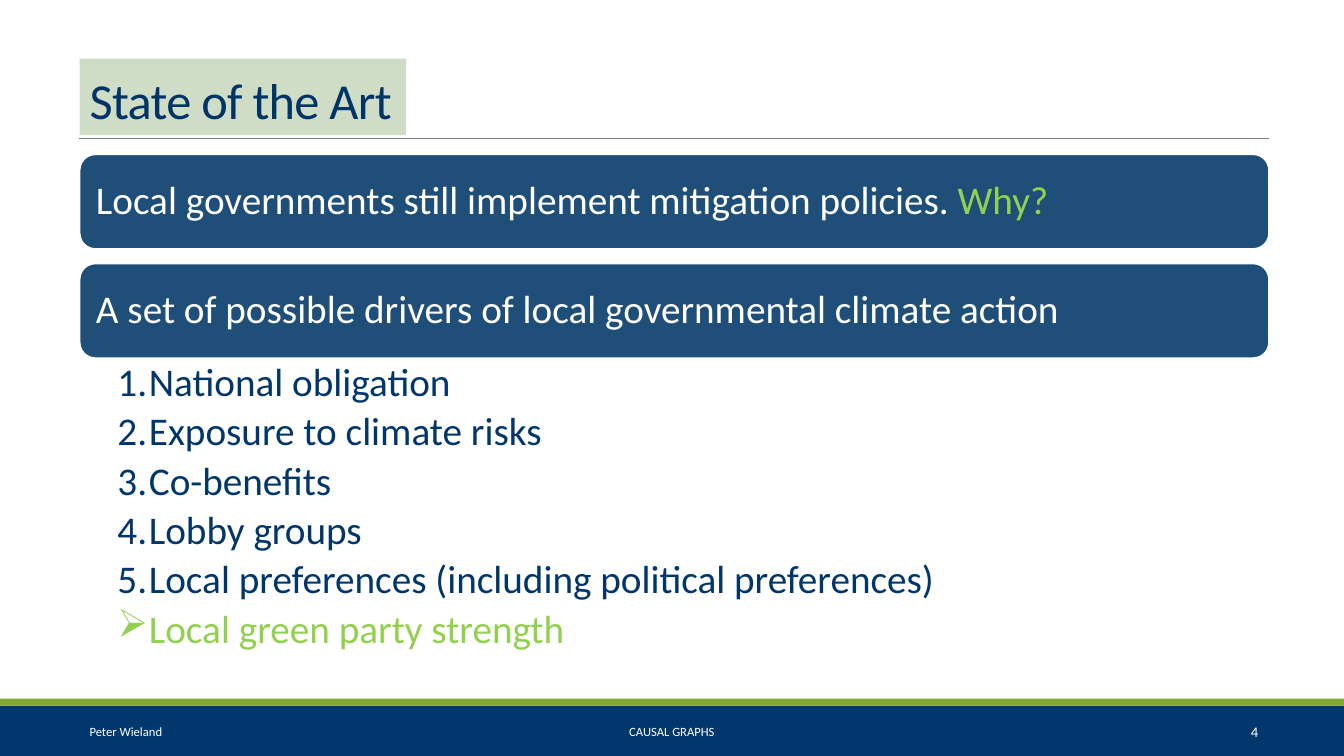
"""Build the State of the Art slide on drivers of local climate action."""
from dataclasses import dataclass

from lxml.etree import SubElement
from pptx import Presentation
from pptx.dml.color import RGBColor
from pptx.enum.shapes import MSO_CONNECTOR as Connector, MSO_SHAPE as Shape
from pptx.enum.text import MSO_ANCHOR as Anchor, MSO_AUTO_SIZE as AutoSize, PP_ALIGN as Align
from pptx.oxml.ns import qn
from pptx.util import Pt

COLORS = {
    "white": "FFFFFF", "footer": "00376C", "stripe": "80A835", "rule": "808080",
    "title": "003366", "title_fill": "548235", "banner": "1F4E79",
    "driver": "00366C", "accent": "92D050",
}
FONT = "Calibri"
LEFT, WIDTH = 56.9, 849.6
BODY_SIZE = 28


@dataclass(frozen=True)
class Bar:
    top: float
    height: float
    color: str


@dataclass(frozen=True)
class FooterNote:
    text: str
    left: float
    width: float
    size: float
    align: Align


@dataclass(frozen=True)
class Banner:
    top: float
    statement: str
    question: str = ""


@dataclass(frozen=True)
class Driver:
    text: str
    color: str = "driver"
    bullet: str = ""


BARS = [Bar(504, 36, "footer"), Bar(499, 5, "stripe")]
FOOTER_NOTES = [
    FooterNote("Peter Wieland", LEFT, 194.4, 9, Align.LEFT),
    FooterNote("CAUSAL GRAPHS", 290.2, 379.4, 9, Align.CENTER),
    FooterNote("4", 802.8, 103, 10.5, Align.RIGHT),
]
BANNERS = [
    Banner(110.2, "Local governments still implement mitigation policies. ", "Why?"),
    Banner(188.2, "A set of possible drivers of local governmental climate action"),
]
DRIVERS = [
    Driver("National obligation"),
    Driver("Exposure to climate risks"),
    Driver("Co-benefits"),
    Driver("Lobby groups"),
    Driver("Local preferences (including political preferences)"),
    Driver("Local green party strength", "accent", "➢"),
]


def rgb(color: str) -> RGBColor:
    """Look up a named colour."""
    return RGBColor.from_string(COLORS[color])


def set_font(font, size: float, color: str) -> None:
    """Apply the slide's typeface with a size and colour."""
    font.name = FONT
    font.size = Pt(size)
    font.color.rgb = rgb(color)


def set_insets(frame, left: float, top: float, right: float, bottom: float) -> None:
    """Set the four margins of a text frame."""
    frame.margin_left, frame.margin_top = Pt(left), Pt(top)
    frame.margin_right, frame.margin_bottom = Pt(right), Pt(bottom)


def draw_title(slide) -> None:
    """Place the title on its pale green panel."""
    title = slide.shapes.title
    title.left, title.top, title.width, title.height = Pt(LEFT), Pt(41.8), Pt(233.3), Pt(54.7)
    title.fill.solid()
    title.fill.fore_color.rgb = rgb("title_fill")
    panel_color = title.fill._xPr.find(qn("a:solidFill"))[0]
    SubElement(panel_color, qn("a:alpha"), val="28000")
    frame = title.text_frame
    frame.text = "State of the Art"
    frame.auto_size = AutoSize.NONE
    frame.vertical_anchor = Anchor.BOTTOM
    heading = frame.paragraphs[0]
    heading.alignment = Align.LEFT
    heading.line_spacing = 0.85
    set_font(heading.font, 36, "title")
    heading.runs[0].font._element.set("spc", "-50")


def draw_rule(slide) -> None:
    """Draw the thin line below the title."""
    rule = slide.shapes.add_connector(Connector.STRAIGHT, Pt(56.2), Pt(98.6), Pt(906.5), Pt(98.6))
    rule.line.color.rgb = rgb("rule")
    rule.line.width = Pt(0.5)
    SubElement(rule._element.spPr, qn("a:effectLst"))


def draw_bar(slide, bar: Bar) -> None:
    """Draw a full-width band at the foot of the slide."""
    band = slide.shapes.add_shape(Shape.RECTANGLE, 0, Pt(bar.top), Pt(960), Pt(bar.height))
    band.shadow.inherit = False
    band.fill.solid()
    band.fill.fore_color.rgb = rgb(bar.color)
    band.line.fill.background()


def draw_footer_note(slide, note: FooterNote) -> None:
    """Write one footer entry."""
    frame = slide.shapes.add_textbox(Pt(note.left), Pt(508.3), Pt(note.width), Pt(28.8)).text_frame
    frame.word_wrap = True
    frame.vertical_anchor = Anchor.MIDDLE
    entry = frame.paragraphs[0]
    entry.text = note.text
    entry.alignment = note.align
    set_font(entry.font, note.size, "white")


def draw_banner(slide, banner: Banner) -> None:
    """Draw a rounded banner with its statement and optional question."""
    panel = slide.shapes.add_shape(
        Shape.ROUNDED_RECTANGLE, Pt(LEFT), Pt(banner.top), Pt(WIDTH), Pt(67.7))
    panel.shadow.inherit = False
    panel.fill.solid()
    panel.fill.fore_color.rgb = rgb("banner")
    panel.line.color.rgb = rgb("white")
    panel.line.width = Pt(1.25)
    frame = panel.text_frame
    frame.word_wrap = True
    frame.vertical_anchor = Anchor.MIDDLE
    set_insets(frame, 8.4, 8.4, 8.4, 8.4)
    sentence = frame.paragraphs[0]
    sentence.alignment = Align.LEFT
    sentence.line_spacing = 0.9
    for text, color in ((banner.statement, "white"), (banner.question, "accent")):
        if text:
            part = sentence.add_run()
            part.text = text
            set_font(part.font, BODY_SIZE, color)


def draw_drivers(slide, drivers: list[Driver]) -> None:
    """Write the numbered drivers and the highlighted conclusion."""
    frame = slide.shapes.add_textbox(Pt(LEFT), Pt(256.3), Pt(WIDTH), Pt(224.6)).text_frame
    frame.word_wrap = True
    set_insets(frame, 27, 2.8, 15.9, 2.8)
    for index, driver in enumerate(drivers):
        item = frame.paragraphs[0] if index == 0 else frame.add_paragraph()
        item.text = driver.text
        item.level = 1
        item.line_spacing = 0.9
        item.space_after = Pt(5)
        properties = item._p.get_or_add_pPr()
        properties.set("marL", str(Pt(22.5)))
        properties.set("indent", str(-Pt(22.5)))
        if driver.bullet:
            SubElement(properties, qn("a:buChar"), char=driver.bullet)
        else:
            SubElement(properties, qn("a:buAutoNum"), type="arabicPeriod")
        set_font(item.font, BODY_SIZE, driver.color)


def main() -> None:
    """Assemble and save the slide."""
    deck = Presentation()
    deck.slide_width, deck.slide_height = Pt(960), Pt(540)
    slide = deck.slides.add_slide(deck.slide_layouts[5])
    draw_title(slide)
    draw_rule(slide)
    for bar in BARS:
        draw_bar(slide, bar)
    for note in FOOTER_NOTES:
        draw_footer_note(slide, note)
    for banner in BANNERS:
        draw_banner(slide, banner)
    draw_drivers(slide, DRIVERS)
    deck.save("out.pptx")


if __name__ == "__main__":
    main()
